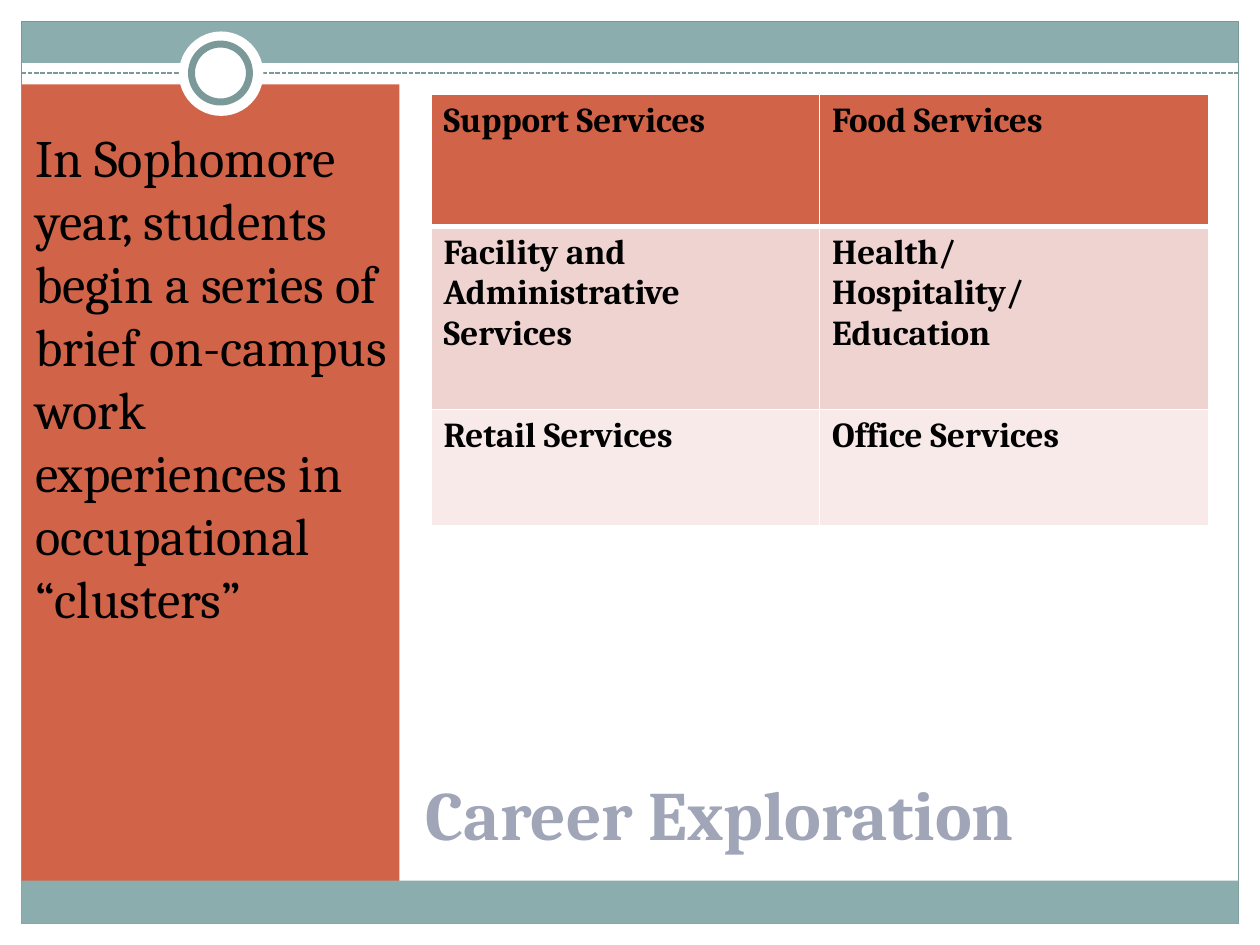
import pptx
import pptx.util
import pptx.dml.color
import pptx.enum.dml
import pptx.enum.shapes
import pptx.enum.text
import pptx.oxml.ns
from lxml import etree

FONT = "Cambria"
TEAL, DARK_TEAL, RUST, WHITE = "8CADAE", "7C999A", "D16349", "FFFFFF"
TITLE = "Career Exploration"
INTRO = ("In Sophomore year, students begin a series of brief on-campus "
         "work experiences in occupational “clusters”")
CLUSTERS = [
    (1.05, RUST, ["Support Services", "Food Services"]),
    (1.45, "EED3D0", ["Facility and Administrative Services",
                      "Health/\nHospitality/\nEducation"]),
    (0.92, "F7EAE9", ["Retail Services", "Office Services"]),
]
RECT = pptx.enum.shapes.MSO_SHAPE.RECTANGLE
OVAL = pptx.enum.shapes.MSO_SHAPE.OVAL
MARGIN = 0.17
INNER = 10 - 2 * MARGIN
DECOR = [
    (RECT, (MARGIN, MARGIN, INNER, 0.33), TEAL, None, 0),
    (RECT, (MARGIN, 0.67, 3, 6.42), RUST, None, 0),
    (RECT, (MARGIN, MARGIN, INNER, 7.16), None, DARK_TEAL, 0.75),
    (None, (MARGIN, 0.58, INNER, 0), None, DARK_TEAL, 0.9),
    (OVAL, (1.42, 0.25, 0.67, 0.67), WHITE, None, 0),
    (OVAL, (1.52, 0.35, 0.46, 0.46), WHITE, DARK_TEAL, 4),
    (RECT, (MARGIN, 6.99, INNER, 0.34), TEAL, None, 0),
]


def color(value):
    return pptx.dml.color.RGBColor.from_string(value)


def inches(values):
    return [pptx.util.Inches(value) for value in values]


def write(frame, text, size, ink="000000", bold=False, bullet=True):
    frame.text = text
    frame.word_wrap = True
    for paragraph in frame.paragraphs:
        if not bullet:
            properties = paragraph._p.get_or_add_pPr()
            properties.set("marL", "0")
            properties.set("indent", "0")
            etree.SubElement(properties, pptx.oxml.ns.qn("a:buNone"))
        paragraph.alignment = pptx.enum.text.PP_ALIGN.LEFT
        paragraph.space_before = pptx.util.Pt(0)
        for run in paragraph.runs:
            run.font.name = FONT
            run.font.size = pptx.util.Pt(size)
            run.font.bold = bold
            run.font.color.rgb = color(ink)


def decorate(slide, kind, box, fill, line, width):
    left, top, wide, high = inches(box)
    if kind is None:
        part = slide.shapes.add_connector(
            pptx.enum.shapes.MSO_CONNECTOR.STRAIGHT, left, top, left + wide, top)
        part.line.dash_style = pptx.enum.dml.MSO_LINE.SQUARE_DOT
        etree.SubElement(part._element.spPr, pptx.oxml.ns.qn("a:effectLst"))
    else:
        part = slide.shapes.add_shape(kind, left, top, wide, high)
        part.shadow.inherit = False
        if fill:
            part.fill.solid()
            part.fill.fore_color.rgb = color(fill)
        else:
            part.fill.background()
    if line:
        part.line.color.rgb = color(line)
        part.line.width = pptx.util.Pt(width)
    else:
        part.line.fill.background()


def place(placeholder, box, anchor):
    placeholder.left, placeholder.top, placeholder.width, placeholder.height = inches(box)
    placeholder.text_frame.auto_size = pptx.enum.text.MSO_AUTO_SIZE.NONE
    placeholder.text_frame.vertical_anchor = anchor
    placeholder.element.getparent().append(placeholder.element)


def border(cell, widths):
    properties = cell._tc.get_or_add_tcPr()
    for side, width in widths.items():
        edge = etree.SubElement(properties, pptx.oxml.ns.qn("a:ln" + side),
                                w=str(pptx.util.Pt(width)))
        fill = etree.SubElement(edge, pptx.oxml.ns.qn("a:solidFill"))
        etree.SubElement(fill, pptx.oxml.ns.qn("a:srgbClr"), val=WHITE)


def add_clusters(slide):
    height = sum(row[0] for row in CLUSTERS)
    table = slide.shapes.add_table(
        len(CLUSTERS), 2, *inches((3.42, 0.75, 6.17, height))).table
    table.horz_banding = False
    for r, (row_height, fill, names) in enumerate(CLUSTERS):
        table.rows[r].height = pptx.util.Inches(row_height)
        for c, name in enumerate(names):
            cell = table.cell(r, c)
            border(cell, {"L": 1, "R": 1, "T": 3 if r == 1 else 1,
                          "B": 3 if r == 0 else 1})
            cell.fill.solid()
            cell.fill.fore_color.rgb = color(fill)
            write(cell.text_frame, name, 20, bold=True)


def main():
    deck = pptx.Presentation()
    deck.slide_width, deck.slide_height = inches((10, 7.5))
    slide = deck.slides.add_slide(deck.slide_layouts[1])
    title, intro = slide.shapes.title, slide.placeholders[1]
    for part in DECOR:
        decorate(slide, *part)
    place(intro, (0.18, 0.94, 3.04, 5.73), pptx.enum.text.MSO_ANCHOR.TOP)
    write(intro.text_frame, INTRO, 30, bullet=False)
    add_clusters(slide)
    place(title, (3.28, 6.08, 6.42, 0.75), pptx.enum.text.MSO_ANCHOR.BOTTOM)
    write(title.text_frame, TITLE, 39.6, ink="A0A5B8", bold=True)
    deck.save("out.pptx")


if __name__ == "__main__":
    main()
